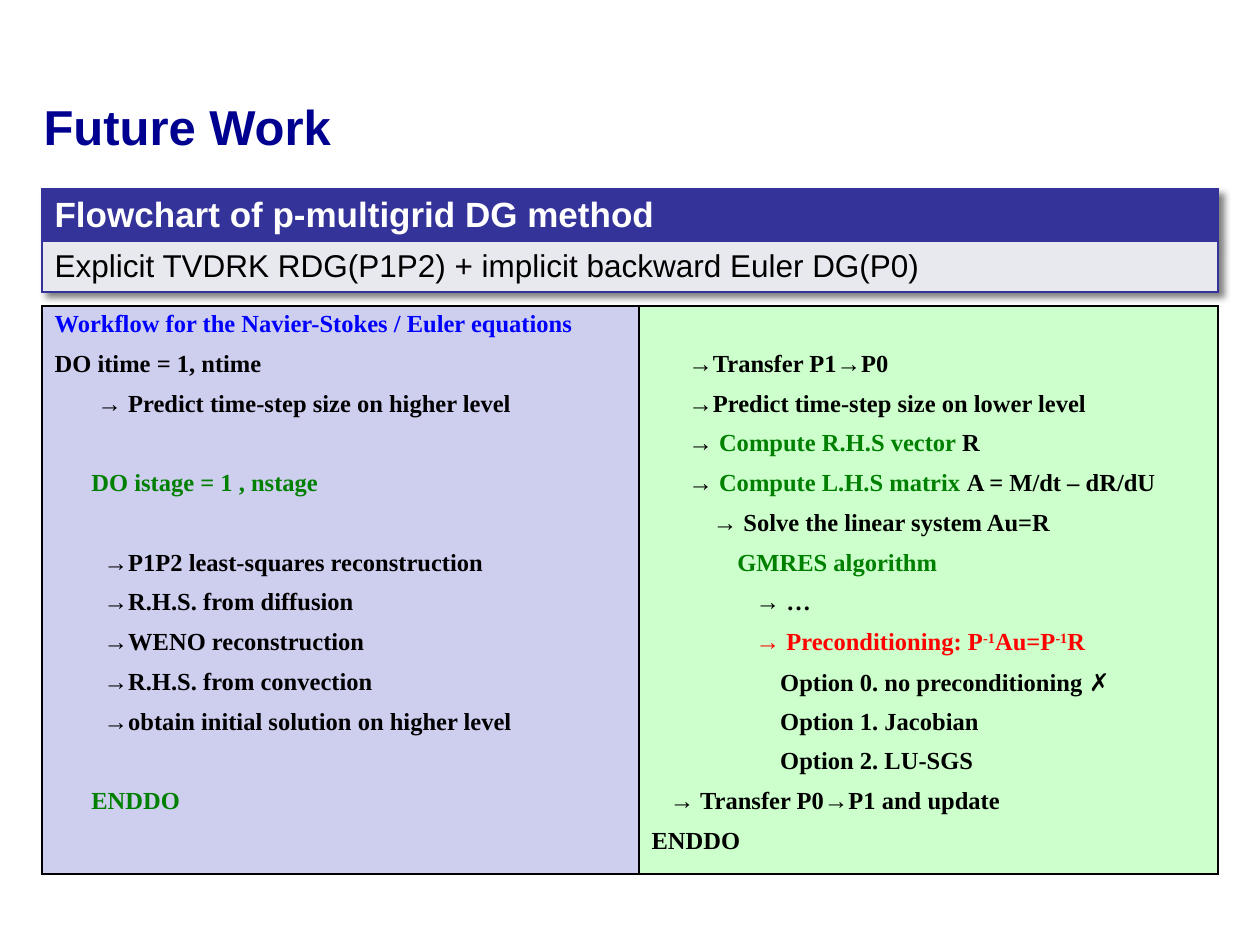
import pptx
import pptx.dml.color
import pptx.enum.text
import pptx.oxml
import pptx.oxml.ns
import pptx.util

PX = 914400 / 126
SPACE = 6.125  # width of one indent step in px
COLORS = {
    "title": "000090", "navy": "333399", "gray": "E8E8EF", "white": "FFFFFF",
    "black": "000000", "blue": "0000FF", "green": "008000", "red": "FF0000",
    "lilac": "CECEEF", "mint": "CCFFCC",
}
NAMESPACE = pptx.oxml.ns.nsdecls("a")
SHADOW = (
    f'<a:effectLst {NAMESPACE}><a:outerShdw blurRad="50800" dist="38100" dir="2700000" '
    'algn="tl" rotWithShape="0"><a:srgbClr val="000000"><a:alpha val="50000"/>'
    "</a:srgbClr></a:outerShdw></a:effectLst>"
)

# Each line: indent steps, then spans of text, colour and optional "super" or font
HIGHER_LEVEL = [
    (0, ("Workflow for the Navier-Stokes / Euler equations", "blue")),
    (0, ("DO itime = 1, ntime", "black")),
    (7, ("→ Predict time-step size on higher level", "black")),
    (0,),
    (6, ("DO istage = 1 , nstage", "green")),
    (0,),
    (8, ("→P1P2 least-squares reconstruction", "black")),
    (8, ("→R.H.S. from diffusion", "black")),
    (8, ("→WENO reconstruction", "black")),
    (8, ("→R.H.S. from convection", "black")),
    (8, ("→obtain initial solution on higher level", "black")),
    (0,),
    (6, ("ENDDO", "green")),
    (0,),
]
LOWER_LEVEL = [
    (0,),
    (6, ("→Transfer P1→P0", "black")),
    (6, ("→Predict time-step size on lower level", "black")),
    (6, ("→ ", "black"), ("Compute R.H.S vector ", "green"), ("R", "black")),
    (6, ("→ ", "black"), ("Compute L.H.S matrix ", "green"), ("A = M/dt – dR/dU", "black")),
    (10, ("→ Solve the linear system Au=R", "black")),
    (14, ("GMRES algorithm", "green")),
    (17, ("→ …", "black")),
    (17, ("→ Preconditioning: P", "red"), ("-1", "red", "super"), ("Au=P", "red"),
     ("-1", "red", "super"), ("R", "red")),
    (21, ("Option 0. no preconditioning ", "black"), ("✗", "black", "Arial")),
    (21, ("Option 1. Jacobian", "black")),
    (21, ("Option 2. LU-SGS", "black")),
    (3, ("→ Transfer P0→P1 and update", "black")),
    (0, ("ENDDO", "black")),
]


def px(value):
    return pptx.util.Emu(round(value * PX))


def rgb(name):
    return pptx.dml.color.RGBColor.from_string(COLORS[name])


def format_font(font, name, size, color, bold):
    font.name = name
    font.size = pptx.util.Pt(size)
    font.bold = bold
    font.color.rgb = rgb(color)


def add_title(page, text):
    title = page.shapes.title
    title.left, title.top, title.width, title.height = px(31), px(84), px(1187), px(84)
    title.text_frame.text = text
    title.text_frame.vertical_anchor = pptx.enum.text.MSO_ANCHOR.MIDDLE
    para = title.text_frame.paragraphs[0]
    para.alignment = pptx.enum.text.PP_ALIGN.LEFT
    format_font(para.runs[0].font, "Arial", 28, "title", True)


def add_table(page, top, widths, heights):
    frame = page.shapes.add_table(
        len(heights), len(widths), px(42), px(top), px(sum(widths)), px(sum(heights)))
    table = frame.table
    for column, width in zip(table.columns, widths):
        column.width = px(width)
    for row, height in zip(table.rows, heights):
        row.height = px(height)
    return table


def style_cell(cell, fill, line, sides):
    """Draw the named sides (of L, R, T, B), hide the others, and fill the cell."""
    properties = cell._tc.get_or_add_tcPr()
    for side in "LRTB":
        paint = (f'<a:solidFill><a:srgbClr val="{COLORS[line]}"/></a:solidFill>'
                 if side in sides else "<a:noFill/>")
        properties.append(pptx.oxml.parse_xml(
            f'<a:ln{side} {NAMESPACE} w="12700">{paint}</a:ln{side}>'))
    cell.fill.solid()
    cell.fill.fore_color.rgb = rgb(fill)


def write_line(cell, indent, *spans):
    cell.margin_top = cell.margin_bottom = px(5)
    para = cell.text_frame.paragraphs[0]
    para._p.get_or_add_pPr().set("marL", str(px(indent * SPACE)))
    for text, color, *extra in spans:
        span = para.add_run()
        span.text = text
        font_name = "Arial" if "Arial" in extra else "Times New Roman"
        format_font(span.font, font_name, 14, color, True)
        if "super" in extra:
            span._r.get_or_add_rPr().set("baseline", "30000")
    if not spans:
        para._p.get_or_add_endParaRPr().set("sz", "1400")


def add_heading_table(page):
    lines = [
        ("Flowchart of p-multigrid DG method", 20, "white", True, "navy"),
        ("Explicit TVDRK RDG(P1P2) + implicit backward Euler DG(P0)", 18, "black", False, "gray"),
    ]
    table = add_table(page, 189, [1176], [52, 51])
    table._tbl.tblPr.insert(0, pptx.oxml.parse_xml(SHADOW))
    for row, (text, size, color, bold, fill) in enumerate(lines):
        cell = table.cell(row, 0)
        style_cell(cell, fill, "navy", "LRTB")
        cell.vertical_anchor = pptx.enum.text.MSO_ANCHOR.MIDDLE
        cell.text_frame.text = text
        format_font(cell.text_frame.paragraphs[0].runs[0].font, "Arial", size, color, bold)


def add_workflow_table(page):
    # Thirteen equal rows share 517 px; the last row is taller
    edges = [round(row * 517 / 13) for row in range(14)]
    heights = [low - high for high, low in zip(edges, edges[1:])] + [51]
    table = add_table(page, 306, [597, 579], heights)
    last = len(heights) - 1
    for column, (fill, lines) in enumerate([("lilac", HIGHER_LEVEL), ("mint", LOWER_LEVEL)]):
        for row, line in enumerate(lines):
            sides = "LR" + ("T" if row == 0 else "") + ("B" if row == last else "")
            cell = table.cell(row, column)
            style_cell(cell, fill, "black", sides)
            write_line(cell, *line)


def main():
    deck = pptx.Presentation()
    deck.slide_width, deck.slide_height = px(1260), px(945)
    page = deck.slides.add_slide(deck.slide_layouts[5])
    add_title(page, "Future Work")
    add_heading_table(page)
    add_workflow_table(page)
    deck.save("out.pptx")


if __name__ == "__main__":
    main()
